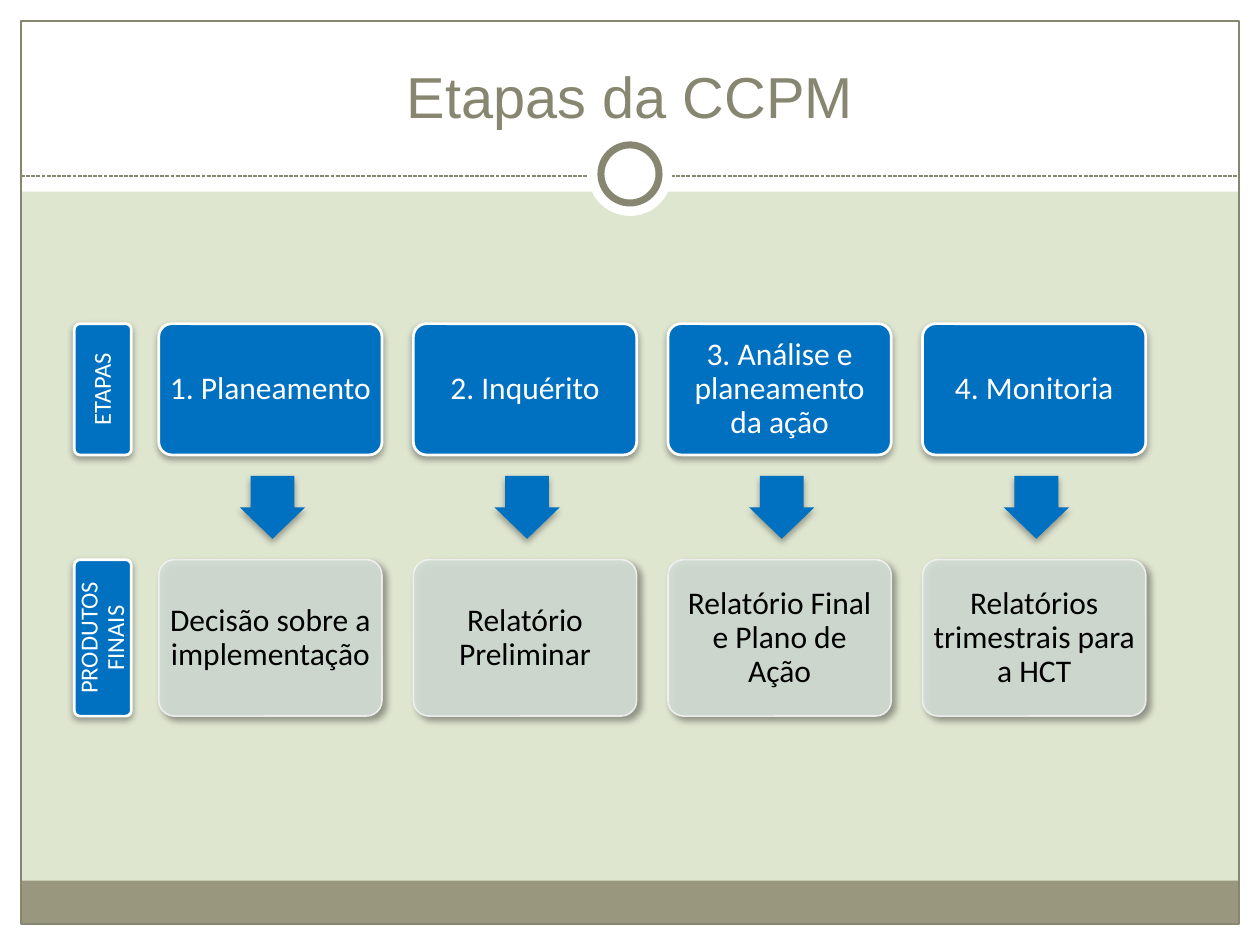
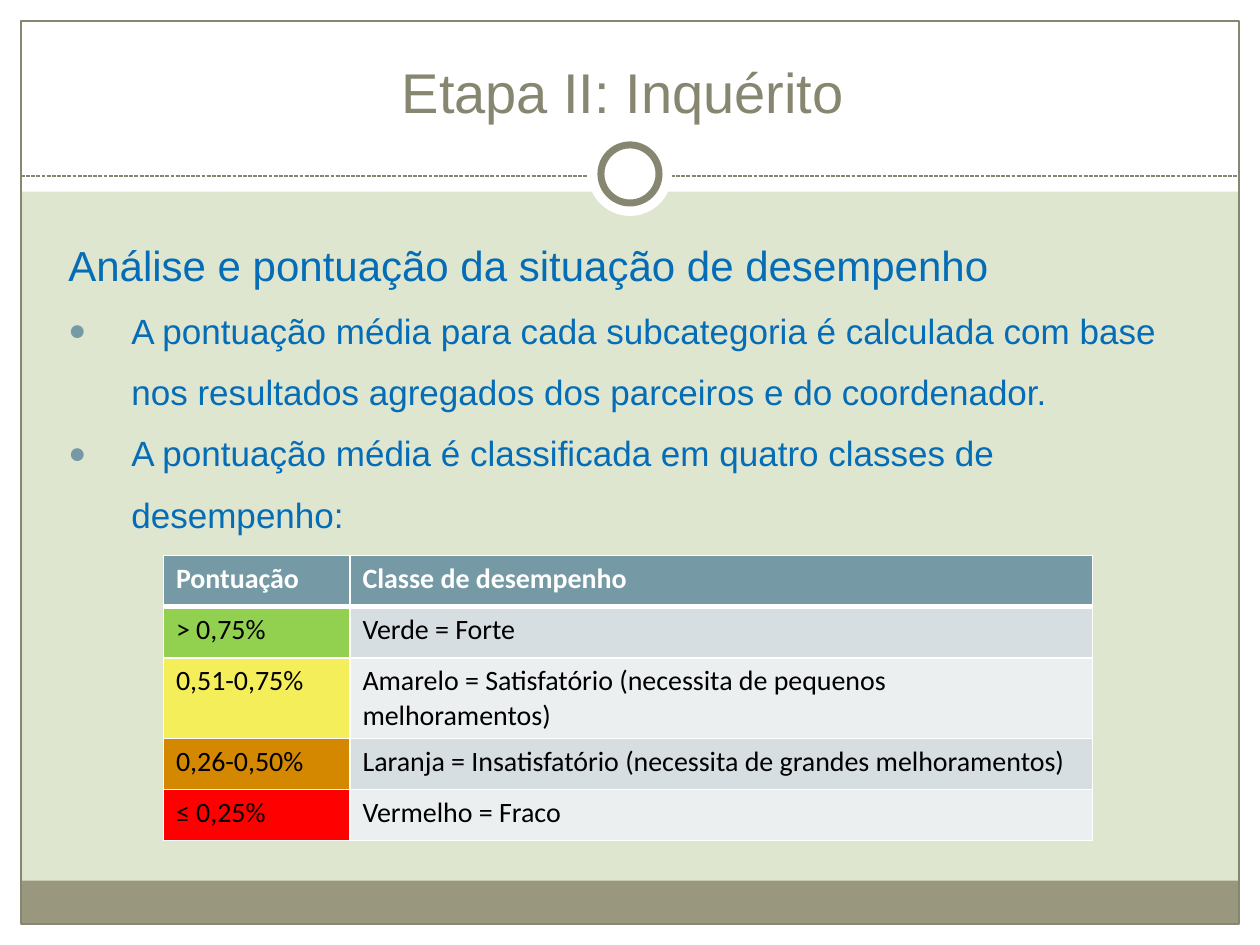
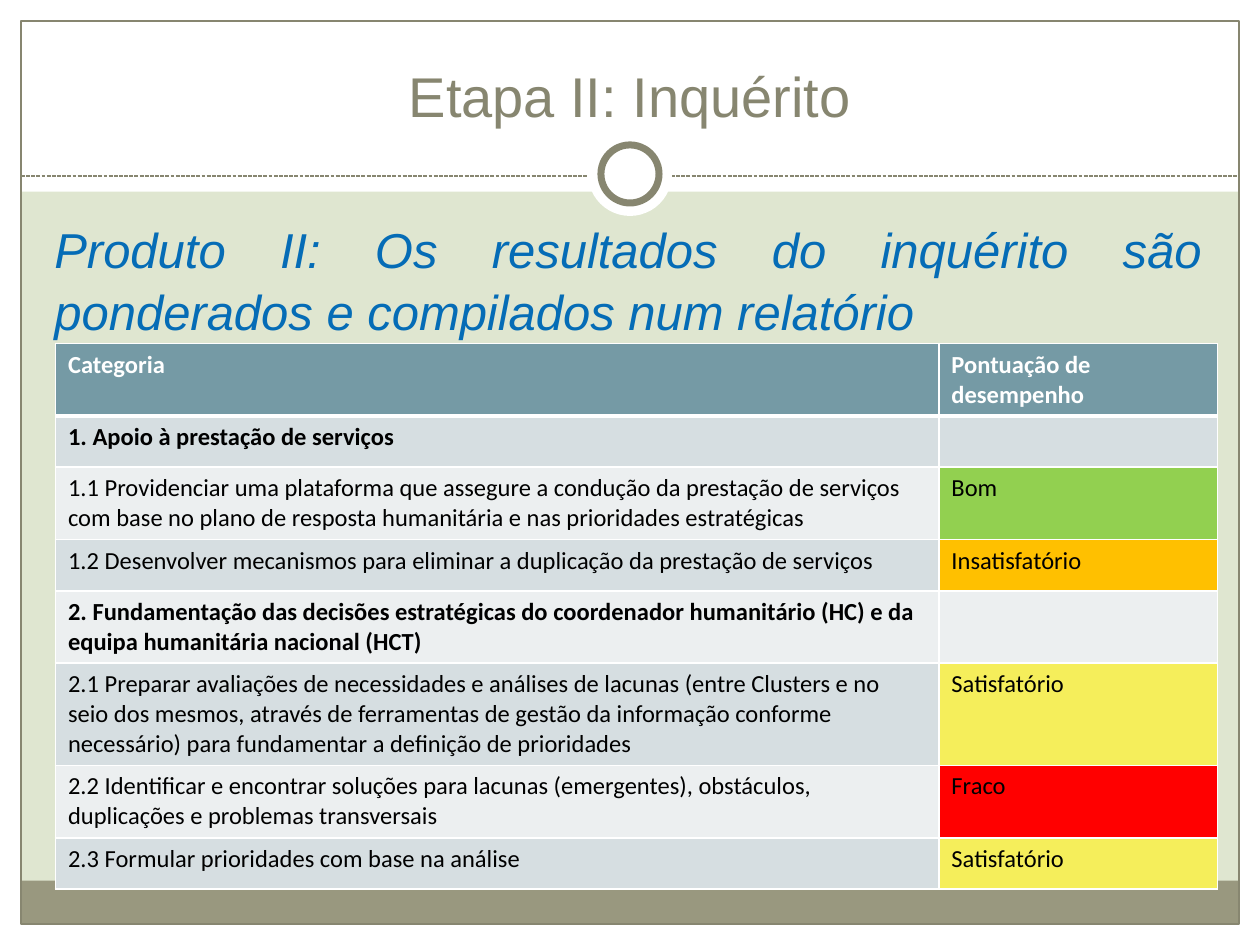
from lxml import etree
from pptx import Presentation
from pptx.dml.color import RGBColor
from pptx.enum.dml import MSO_LINE
from pptx.enum.shapes import MSO_CONNECTOR, MSO_SHAPE
from pptx.enum.text import MSO_ANCHOR, PP_ALIGN
from pptx.oxml.ns import qn
from pptx.util import Pt

RECT, OVAL = MSO_SHAPE.RECTANGLE, MSO_SHAPE.OVAL
ROUNDED, DOWN_ARROW = MSO_SHAPE.ROUNDED_RECTANGLE, MSO_SHAPE.DOWN_ARROW
STRAIGHT, SYS_DASH = MSO_CONNECTOR.STRAIGHT, MSO_LINE.SQUARE_DOT
LEFT, CENTER, JUSTIFY = PP_ALIGN.LEFT, PP_ALIGN.CENTER, PP_ALIGN.JUSTIFY
TOP, MIDDLE, BOTTOM = MSO_ANCHOR.TOP, MSO_ANCHOR.MIDDLE, MSO_ANCHOR.BOTTOM

SLIDE_W, SLIDE_H, MARGIN = 720, 540, 12
WHITE, BLACK = "FFFFFF", "000000"
SAGE, OLIVE, BAND = "DFE6D0", "878670", "99987F"
STEP_BLUE, TEXT_BLUE, TEAL = "0070C0", "056CB6", "759AA5"
PRODUCT_GREY, PRODUCT_EDGE = "D3DED5", "F2F2F2"
ROW_FILLS = ("D6DEE1", "ECEFF0")
GREEN, YELLOW, ORANGE, AMBER, RED = "92D050", "F5EE5B", "D48800", "FFC000", "FF0000"

SOFT_SHADOW = {"alpha": 35, "blur": 4, "dist": 2, "angle": 90}
SIDE_SHADOW = {"alpha": 40, "blur": 4, "dist": 3, "angle": 45}

STAGES = [
    ("1. Planeamento", "Decisão sobre a implementação"),
    ("2. Inquérito", "Relatório Preliminar"),
    ("3. Análise e planeamento da ação", "Relatório Final e Plano de Ação"),
    ("4. Monitoria", "Relatórios trimestrais para a HCT"),
]

SCORE_CLASSES = [
    ("Pontuação", "Classe de desempenho"),
    ("> 0,75%", "Verde = Forte"),
    ("0,51-0,75%", "Amarelo = Satisfatório (necessita de pequenos melhoramentos)"),
    ("0,26-0,50%", "Laranja = Insatisfatório (necessita de grandes melhoramentos)"),
    ("≤ 0,25%", "Vermelho = Fraco"),
]
CLASS_FILLS = {(1, 0): GREEN, (2, 0): YELLOW, (3, 0): ORANGE, (4, 0): RED}

SURVEY_RESULTS = [
    ("Categoria", "Pontuação de desempenho"),
    ("1. Apoio à prestação de serviços", ""),
    ("1.1 Providenciar uma plataforma que assegure a condução da prestação de serviços "
     "com base no plano de resposta humanitária e nas prioridades estratégicas", "Bom"),
    ("1.2 Desenvolver mecanismos para eliminar a duplicação da prestação de serviços",
     "Insatisfatório"),
    ("2. Fundamentação das decisões estratégicas do coordenador humanitário (HC) e da "
     "equipa humanitária nacional (HCT)", ""),
    ("2.1 Preparar avaliações de necessidades e análises de lacunas (entre Clusters e no "
     "seio dos mesmos, através de ferramentas de gestão da informação conforme "
     "necessário) para fundamentar a definição de prioridades", "Satisfatório"),
    ("2.2 Identificar e encontrar soluções para lacunas (emergentes), obstáculos, "
     "duplicações e problemas transversais", "Fraco"),
    ("2.3 Formular prioridades com base na análise", "Satisfatório"),
]
RESULT_FILLS = {"Bom": GREEN, "Insatisfatório": AMBER, "Satisfatório": YELLOW, "Fraco": RED}


def rgb(value):
    return RGBColor.from_string(value)


def add_xml(parent, tag, **attributes):
    child = etree.SubElement(parent, qn(tag))
    for name, value in attributes.items():
        child.set(name, str(value))
    return child


def set_alpha(holder, percent):
    add_xml(holder.find(".//" + qn("a:srgbClr")), "a:alpha", val=percent * 1000)


def add_bullet(paragraph):
    props = paragraph._p.get_or_add_pPr()
    add_xml(add_xml(props, "a:buClr"), "a:srgbClr", val=TEAL)
    add_xml(props, "a:buSzPct", val=85000)
    add_xml(props, "a:buFont", typeface="Arial")
    add_xml(props, "a:buChar", char="●")


def write(frame, text, *, size, color, font="Calibri", bold=False, italic=False,
          align=LEFT, anchor=TOP, spacing=1.0, indent=(0, 0), bullet=False, more=False):
    frame.word_wrap = True
    frame.vertical_anchor = anchor
    paragraph = frame.add_paragraph() if more else frame.paragraphs[0]
    paragraph.alignment = align
    paragraph.line_spacing = spacing
    props = paragraph._p.get_or_add_pPr()
    props.set("marL", str(Pt(indent[0])))
    props.set("indent", str(Pt(indent[1])))
    if bullet:
        add_bullet(paragraph)
    run = paragraph.add_run()
    run.text = text
    run.font.name, run.font.size = font, Pt(size)
    run.font.bold, run.font.italic = bold, italic
    run.font.color.rgb = rgb(color)


def add_shadow(shape, alpha, blur, dist, angle):
    effects = shape._element.spPr.find(qn("a:effectLst"))
    shadow = add_xml(effects, "a:outerShdw", blurRad=Pt(blur), dist=Pt(dist),
                     dir=angle * 60000, rotWithShape=0)
    add_xml(shadow, "a:srgbClr", val=BLACK)
    set_alpha(shadow, alpha)


def add_shape(slide, kind, left, top, width, height, fill=None, line=None, weight=0.75,
              shadow=None):
    shape = slide.shapes.add_shape(kind, Pt(left), Pt(top), Pt(width), Pt(height))
    shape.shadow.inherit = False
    if fill:
        shape.fill.solid()
        shape.fill.fore_color.rgb = rgb(fill)
    else:
        shape.fill.background()
    if line:
        shape.line.color.rgb = rgb(line)
        shape.line.width = Pt(weight)
    else:
        shape.line.fill.background()
    if shadow:
        add_shadow(shape, **shadow)
    return shape


def add_circle(slide, center_y, size, **style):
    add_shape(slide, OVAL, (SLIDE_W - size) / 2, center_y - size / 2, size, size, **style)


def add_text_box(slide, left, top, width, height):
    return slide.shapes.add_textbox(Pt(left), Pt(top), Pt(width), Pt(height)).text_frame


def add_body(slide):
    return add_text_box(slide, 24, 120.2, 669.6, 360)


def add_divider(slide, y):
    divider = slide.shapes.add_connector(STRAIGHT, Pt(MARGIN), Pt(y),
                                         Pt(SLIDE_W - MARGIN), Pt(y))
    divider.line.color.rgb = rgb(OLIVE)
    divider.line.width = Pt(0.75)
    divider.line.dash_style = SYS_DASH
    add_xml(divider._element.spPr, "a:effectLst")


def new_slide(prs, title, size=32, left=24, bottom=77.6):
    slide = prs.slides.add_slide(prs.slide_layouts[6])
    inner_w = SLIDE_W - 2 * MARGIN
    for edge in ((0, SLIDE_H - MARGIN, SLIDE_W, MARGIN), (0, 0, SLIDE_W, 109.5),
                 (0, 0, MARGIN, SLIDE_H), (SLIDE_W - MARGIN, 0, MARGIN, SLIDE_H)):
        add_shape(slide, RECT, *edge, fill=WHITE)
    add_shape(slide, RECT, MARGIN, 503.2, inner_w, 24.8, fill=BAND)
    add_shape(slide, RECT, MARGIN, MARGIN, inner_w, SLIDE_H - 2 * MARGIN, line=OLIVE)
    add_divider(slide, 100.6)
    add_circle(slide, 99.4, 48, fill=WHITE)
    add_circle(slide, 99.4, 33.2, fill=WHITE, line=OLIVE, weight=4)
    write(add_text_box(slide, left, bottom - 54, 672, 54), title, size=size, color=OLIVE,
          font="Arial", align=CENTER, anchor=BOTTOM)
    return slide


def add_box(slide, text, left, top, width, height, *, size=18, product=False, rotation=0):
    if product:
        style = {"fill": PRODUCT_GREY, "line": PRODUCT_EDGE, "weight": 0.9,
                 "shadow": SIDE_SHADOW}
    else:
        style = {"fill": STEP_BLUE, "line": WHITE, "weight": 1.57, "shadow": SOFT_SHADOW}
    box = add_shape(slide, ROUNDED, left, top, width, height, **style)
    box.adjustments[0] = 0.1
    box.rotation = rotation
    if product:
        set_alpha(box._element.spPr.find(qn("a:solidFill")), 90)
        set_alpha(box._element.spPr.find(qn("a:ln")), 90)
    frame = box.text_frame
    frame.margin_left = frame.margin_right = Pt(3.6)
    frame.margin_top = frame.margin_bottom = Pt(3.6)
    write(frame, text, size=size, color=BLACK if product else WHITE, align=CENTER,
          anchor=MIDDLE, spacing=0.9)


def add_row_label(slide, text, top, height):
    center_x, thickness = 58.8, 32.6
    add_box(slide, text, center_x - height / 2, top + (height - thickness) / 2,
            height, thickness, size=14, rotation=270)


def set_borders(cell, row):
    props = cell._tc.get_or_add_tcPr()
    weights = {"L": 1, "R": 1, "T": 3 if row == 1 else 1, "B": 3 if row == 0 else 1}
    for position, (side, weight) in enumerate(weights.items()):
        border = add_xml(props, f"a:ln{side}", w=Pt(weight))
        add_xml(add_xml(border, "a:solidFill"), "a:srgbClr", val=WHITE)
        props.insert(position, border)


def add_table(slide, rows, left, top, widths, heights, size, fills, bold_rows=()):
    table = slide.shapes.add_table(len(rows), len(widths), Pt(left), Pt(top),
                                   Pt(sum(widths)), Pt(sum(heights))).table
    table.horz_banding = False
    for column, width in zip(table.columns, widths):
        column.width = Pt(width)
    for r, (texts, height) in enumerate(zip(rows, heights)):
        table.rows[r].height = Pt(height)
        row_fill = ROW_FILLS[(r - 1) % 2] if r else TEAL
        for c, text in enumerate(texts):
            cell = table.cell(r, c)
            cell.fill.solid()
            cell.fill.fore_color.rgb = rgb(fills.get((r, c), row_fill))
            set_borders(cell, r)
            if text:
                write(cell.text_frame, text, size=size, color=BLACK if r else WHITE,
                      bold=r == 0 or r in bold_rows)


def build_stages(prs):
    slide = new_slide(prs, "Etapas da CCPM", size=33)
    first_left, pitch, box_w = 90.7, 145.5, 127.6
    stage_top, stage_h = 185, 75
    product_top, product_h = 319.8, 89.4
    arrow_w, arrow_h = 37.4, 36
    arrow_top = (stage_top + stage_h + product_top - arrow_h) / 2
    for i, (stage, product) in enumerate(STAGES):
        left = first_left + i * pitch
        add_box(slide, stage, left, stage_top, box_w, stage_h)
        arrow = add_shape(slide, DOWN_ARROW, left + 1.2 + (box_w - arrow_w) / 2, arrow_top,
                          arrow_w, arrow_h, fill=STEP_BLUE, shadow=SOFT_SHADOW)
        arrow.adjustments[0] = 0.67
        add_box(slide, product, left, product_top, box_w, product_h, product=True)
    add_row_label(slide, "ETAPAS", stage_top, stage_h)
    add_row_label(slide, "PRODUTOS FINAIS", product_top, product_h)


def build_score_classes(prs):
    slide = new_slide(prs, "Etapa II: Inquérito", left=20, bottom=74.9)
    body = add_body(slide)
    style = {"color": TEXT_BLUE, "font": "Arial", "spacing": 1.46}
    write(body, "Análise e pontuação da situação de desempenho", size=24,
          indent=(8, 0), **style)
    for point in ("A pontuação média para cada subcategoria é calculada com base nos "
                  "resultados agregados dos parceiros e do coordenador.",
                  "A pontuação média é classificada em quatro classes de desempenho:"):
        write(body, point, size=20, indent=(44, -36), bullet=True, more=True, **style)
    add_table(slide, SCORE_CLASSES, 93.4, 317.5, (106.6, 424.4),
              (29.2, 29.2, 46, 29.2, 29.2), 16, CLASS_FILLS)


def build_survey_results(prs):
    slide = new_slide(prs, "Etapa II: Inquérito", bottom=77)
    write(add_body(slide), "Produto II: Os resultados do inquérito são ponderados e "
          "compilados num relatório", size=28, color=TEXT_BLUE, font="Arial",
          italic=True, align=JUSTIFY, spacing=1.05)
    fills = {(r, 1): RESULT_FILLS[score]
             for r, (_, score) in enumerate(SURVEY_RESULTS) if score in RESULT_FILLS}
    add_table(slide, SURVEY_RESULTS, 31.7, 196.4, (504.8, 159.2),
              (41.4, 29.2, 41.4, 29.2, 41.4, 58.4, 41.4, 29.2), 14, fills,
              bold_rows=(1, 4))


def main():
    prs = Presentation()
    prs.slide_width, prs.slide_height = Pt(SLIDE_W), Pt(SLIDE_H)
    backdrop = prs.slide_master.background.fill
    backdrop.solid()
    backdrop.fore_color.rgb = rgb(SAGE)
    build_stages(prs)
    build_score_classes(prs)
    build_survey_results(prs)
    prs.save("out.pptx")


if __name__ == "__main__":
    main()
